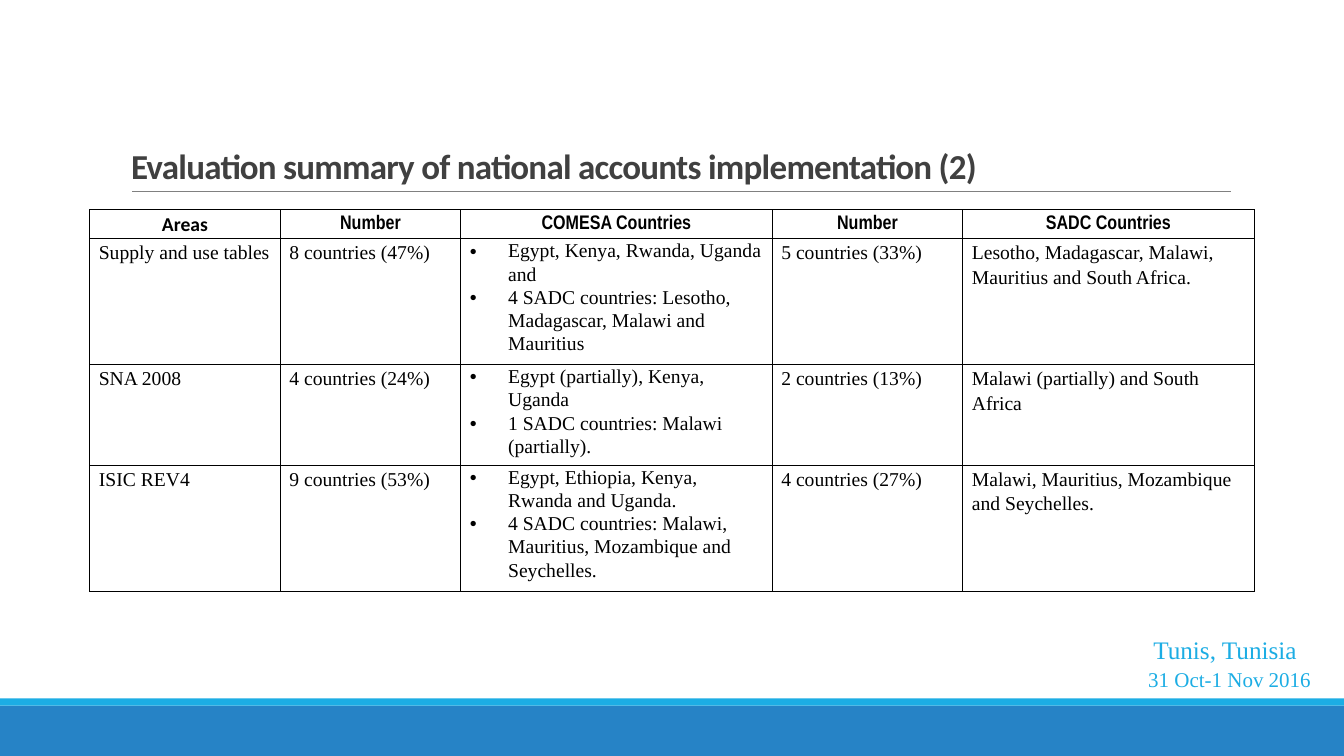
import pptx
import pptx.dml.color
import pptx.enum.shapes
import pptx.enum.text
import pptx.oxml
import pptx.oxml.ns
import pptx.util
from lxml import etree

Inches = pptx.util.Inches
Pt = pptx.util.Pt
qn = pptx.oxml.ns.qn
PP_ALIGN = pptx.enum.text.PP_ALIGN
ANCHOR = pptx.enum.text.MSO_ANCHOR
AUTO_SIZE = pptx.enum.text.MSO_AUTO_SIZE

SERIF = "Times New Roman"
COLUMNS = [1.89, 1.79, 3.09, 1.89, 2.89]
ROWS = [0.29, 0.9, 0.72, 0.9]
HEADINGS = ["Areas", "Number", "COMESA Countries", "Number", "SADC Countries"]
AREAS = [
    ["Supply and use tables", "8 countries (47%)",
     ["Egypt, Kenya, Rwanda, Uganda and",
      "4 SADC countries: Lesotho, Madagascar, Malawi and Mauritius"],
     "5 countries (33%)",
     "Lesotho, Madagascar, Malawi, Mauritius and South Africa."],
    ["SNA 2008", "4 countries (24%)",
     ["Egypt (partially), Kenya, Uganda",
      "1 SADC countries: Malawi (partially)."],
     "2 countries (13%)",
     "Malawi (partially) and South Africa"],
    ["ISIC REV4", "9 countries (53%)",
     ["Egypt, Ethiopia, Kenya, Rwanda and Uganda.",
      "4 SADC countries: Malawi, Mauritius, Mozambique and Seychelles."],
     "4 countries (27%)",
     "Malawi, Mauritius, Mozambique and Seychelles."],
]


def rgb(color):
    return pptx.dml.color.RGBColor.from_string(color)


def write(p, text, size=14, font=SERIF, color="000000", bold=False,
          align=PP_ALIGN.LEFT, spacing=1.0, bullet=False, tracking=None):
    p.alignment = align
    p.line_spacing = spacing
    if bullet:
        pPr = p._p.get_or_add_pPr()
        pPr.set("marL", str(Inches(0.38)))
        pPr.set("indent", str(-Inches(0.38)))
        etree.SubElement(pPr, qn("a:buFont")).set("typeface", "Arial")
        etree.SubElement(pPr, qn("a:buChar")).set("char", "•")
    r = p.add_run()
    r.text = text
    r.font.size = Pt(size)
    r.font.name = font
    r.font.bold = bold
    r.font.color.rgb = rgb(color)
    if tracking is not None:
        r._r.get_or_add_rPr().set("spc", str(tracking))


def add_band(s, x, y, w, h, color):
    sp = s.shapes.add_shape(pptx.enum.shapes.MSO_SHAPE.RECTANGLE,
                            Inches(x), Inches(y), Inches(w), Inches(h))
    sp.shadow.inherit = False
    sp.fill.solid()
    sp.fill.fore_color.rgb = rgb(color)
    sp.line.fill.background()


def add_label(s, x, y, w, h, text, size):
    sp = s.shapes.add_textbox(Inches(x), Inches(y), Inches(w), Inches(h))
    tf = sp.text_frame
    tf.word_wrap = False
    tf.auto_size = AUTO_SIZE.SHAPE_TO_FIT_TEXT
    write(tf.paragraphs[0], text, size=size, color="1CADE4", align=PP_ALIGN.CENTER)


def add_footer(s, x, y, w, h):
    add_band(s, x, y + 0.07, w, h - 0.07, "2683C6")
    add_band(s, x, y, w, 0.07, "1CADE4")
    add_label(s, x + w - 2, y - 0.69, 1.64, 0.4, "Tunis, Tunisia", 18)
    add_label(s, x + w - 2.05, y - 0.37, 1.83, 0.35, "31 Oct-1 Nov 2016", 15)


def add_title(s, x, y, w, h, text):
    rule = s.shapes.add_connector(
        pptx.enum.shapes.MSO_CONNECTOR.STRAIGHT,
        Inches(x + 0.11), Inches(y + h), Inches(x + w + 0.01), Inches(y + h))
    rule.line.color.rgb = rgb("808080")
    rule.line.width = Pt(0.5)
    etree.SubElement(rule._element.spPr, qn("a:effectLst"))

    sp = s.shapes.title
    sp.left, sp.top, sp.width, sp.height = map(Inches, (x, y, w, h))
    tf = sp.text_frame
    tf.word_wrap = True
    tf.auto_size = AUTO_SIZE.NONE
    tf.vertical_anchor = ANCHOR.BOTTOM
    write(tf.paragraphs[0], text, size=25, font="Calibri", color="404040",
          bold=True, spacing=0.85, tracking=-50)


def format_cell(cell):
    cell.margin_left = cell.margin_right = Inches(0.09)
    cell.margin_top = cell.margin_bottom = 0
    cell.fill.background()
    tcPr = cell._tc.get_or_add_tcPr()
    for i, side in enumerate(("lnL", "lnR", "lnT", "lnB")):
        ln = etree.Element(qn("a:" + side), w=str(Pt(1)))
        fill = etree.SubElement(ln, qn("a:solidFill"))
        etree.SubElement(fill, qn("a:srgbClr")).set("val", "000000")
        tcPr.insert(i, ln)


def fill_heading(cell, text, font):
    write(cell.text_frame.paragraphs[0], text, font=font, bold=True,
          align=PP_ALIGN.CENTER, spacing=Pt(17.3))


def fill_entry(cell, entry):
    tf = cell.text_frame
    if isinstance(entry, str):
        write(tf.paragraphs[0], entry, spacing=1.15)
        return
    for i, text in enumerate(entry):
        p = tf.add_paragraph() if i else tf.paragraphs[0]
        write(p, text, spacing=1.07, bullet=True)


def add_areas_table(s, x, y):
    table = s.shapes.add_table(
        len(ROWS), len(COLUMNS), Inches(x), Inches(y),
        Inches(sum(COLUMNS)), Inches(sum(ROWS))).table
    table.first_row = table.horz_banding = False
    for column, width in zip(table.columns, COLUMNS):
        column.width = Inches(width)
    for row, height in zip(table.rows, ROWS):
        row.height = Inches(height)
    for cell in table.iter_cells():
        format_cell(cell)
    for j, heading in enumerate(HEADINGS):
        fill_heading(table.cell(0, j), heading, "Arial Narrow" if j else "Calibri")
    table.cell(0, 0).vertical_anchor = ANCHOR.MIDDLE
    for i, area in enumerate(AREAS, 1):
        for j, entry in enumerate(area):
            fill_entry(table.cell(i, j), entry)


def main():
    prs = pptx.Presentation()
    prs.slide_width = Inches(13.33)
    prs.slide_height = Inches(7.5)
    s = prs.slides.add_slide(prs.slide_layouts[5])
    add_footer(s, 0, 6.93, 13.33, 0.57)
    add_title(s, 1.2, 0.31, 11, 1.59,
              "Evaluation summary of national accounts implementation (2)")
    add_areas_table(s, 0.89, 2.08)
    prs.save("out.pptx")


if __name__ == "__main__":
    main()
